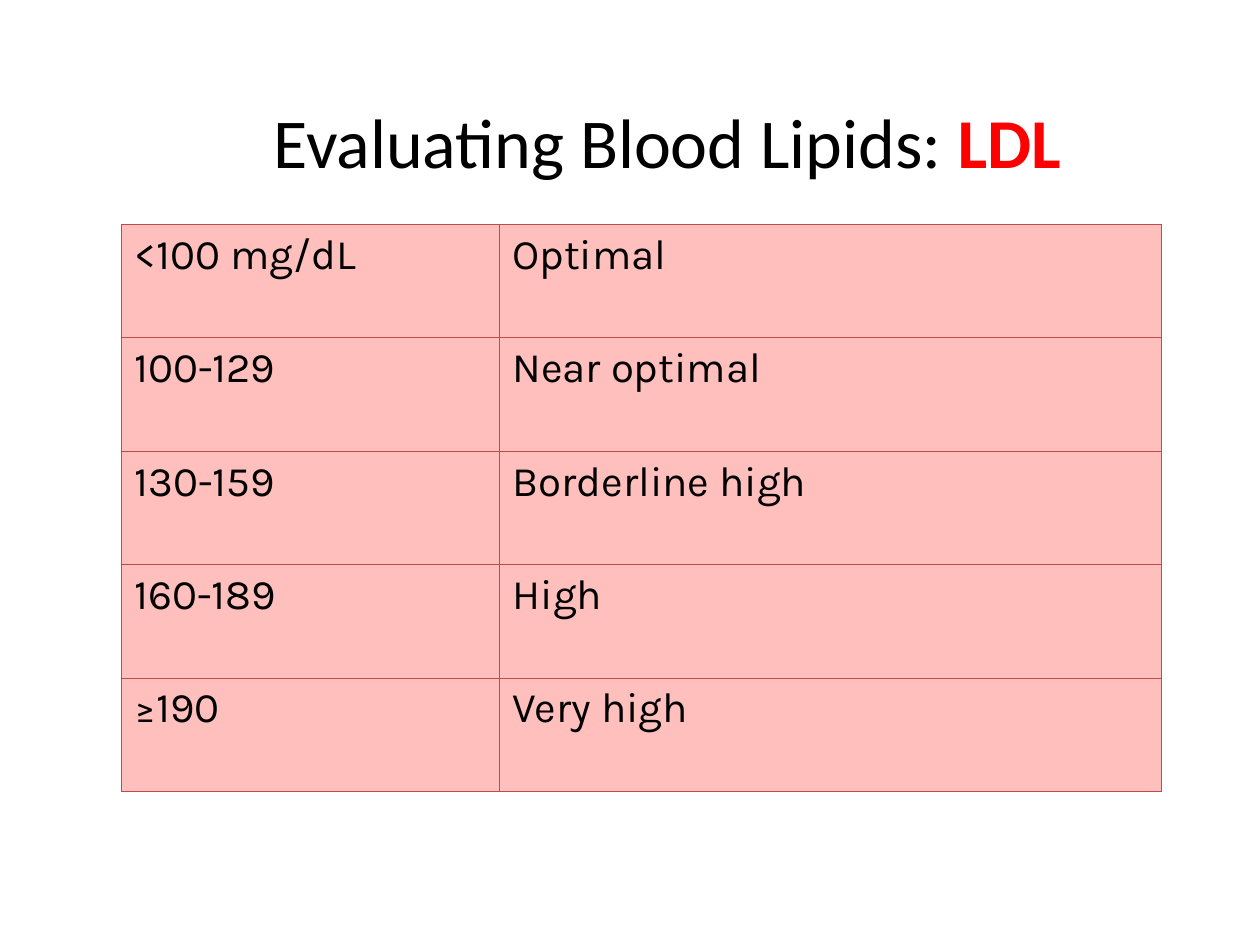
from lxml import etree
from pptx import Presentation
from pptx.dml.color import RGBColor
from pptx.enum.text import MSO_ANCHOR, PP_ALIGN
from pptx.oxml.ns import qn
from pptx.util import Inches, Pt

CENTER = PP_ALIGN.CENTER
MIDDLE = MSO_ANCHOR.MIDDLE
TITLE_ONLY = 5

COLORS = {"text": "000000", "accent": "FF0000", "cell": "FFBFBD", "border": "BF4C48"}

LDL_LEVELS = [
    ("<100 mg/dL", "Optimal"),
    ("100-129", "Near optimal"),
    ("130-159", "Borderline high"),
    ("160-189", "High"),
    ("≥190", "Very high"),
]


class Deck:
    """Holds the style and the current slide; places are in columns and rows of a grid."""

    title_font, title_size = "Calibri", Pt(40)
    table_font, table_size = "Karla", Pt(24)
    border_width = Pt(0.75)
    column = Inches(0.75)
    row = Inches(0.9)

    def __init__(self):
        self.prs = Presentation()
        self.prs.slide_width, self.prs.slide_height = Inches(10), Inches(7.5)
        self.slide = self.prs.slides.add_slide(self.prs.slide_layouts[TITLE_ONLY])

    def box(self, left, top, columns, rows):
        return (round(left * self.column), round(top * self.row),
                round(columns * self.column), round(rows * self.row))

    def font(self, font, name, size, color="text"):
        font.name, font.size = name, size
        font.color.rgb = RGBColor.from_string(COLORS[color])

    def title(self, text, accent, box):
        sp = self.slide.shapes.title
        sp.left, sp.top, sp.width, sp.height = box
        tf = sp.text_frame
        tf.vertical_anchor = MIDDLE
        p = tf.paragraphs[0]
        p.alignment = CENTER
        for words, color in ((text, "text"), (accent, "accent")):
            r = p.add_run()
            r.text = words
            self.font(r.font, self.title_font, self.title_size, color)
            r.font.bold = color == "accent"

    def table(self, data, left, top, spans):
        """Add a table whose columns span the given numbers of grid columns."""
        box = self.box(left, top, sum(spans), len(data))
        table = self.slide.shapes.add_table(len(data), len(spans), *box).table
        table.first_row = table.horz_banding = False
        for column, span in zip(table.columns, spans):
            column.width = span * self.column
        for i, values in enumerate(data):
            for j, value in enumerate(values):
                self.cell(table.cell(i, j), value)

    def cell(self, cell, text):
        self.borders(cell)
        cell.fill.solid()
        cell.fill.fore_color.rgb = RGBColor.from_string(COLORS["cell"])
        p = cell.text_frame.paragraphs[0]
        p.text = text
        p.space_before = Pt(4.8)
        self.font(p.font, self.table_font, self.table_size)

    def borders(self, cell):
        tc_pr = cell._tc.get_or_add_tcPr()
        for side in ("a:lnL", "a:lnR", "a:lnT", "a:lnB"):
            ln = etree.SubElement(tc_pr, qn(side), w=str(self.border_width))
            fill = etree.SubElement(ln, qn("a:solidFill"))
            etree.SubElement(fill, qn("a:srgbClr"), val=COLORS["border"])


def main():
    deck = Deck()
    deck.title("Evaluating Blood Lipids: ", "LDL", deck.box(1.56, 0.37, 11, 1.74))
    deck.table(LDL_LEVELS, left=1.29, top=1.98, spans=(4, 7))
    deck.prs.save("out.pptx")


if __name__ == "__main__":
    main()
